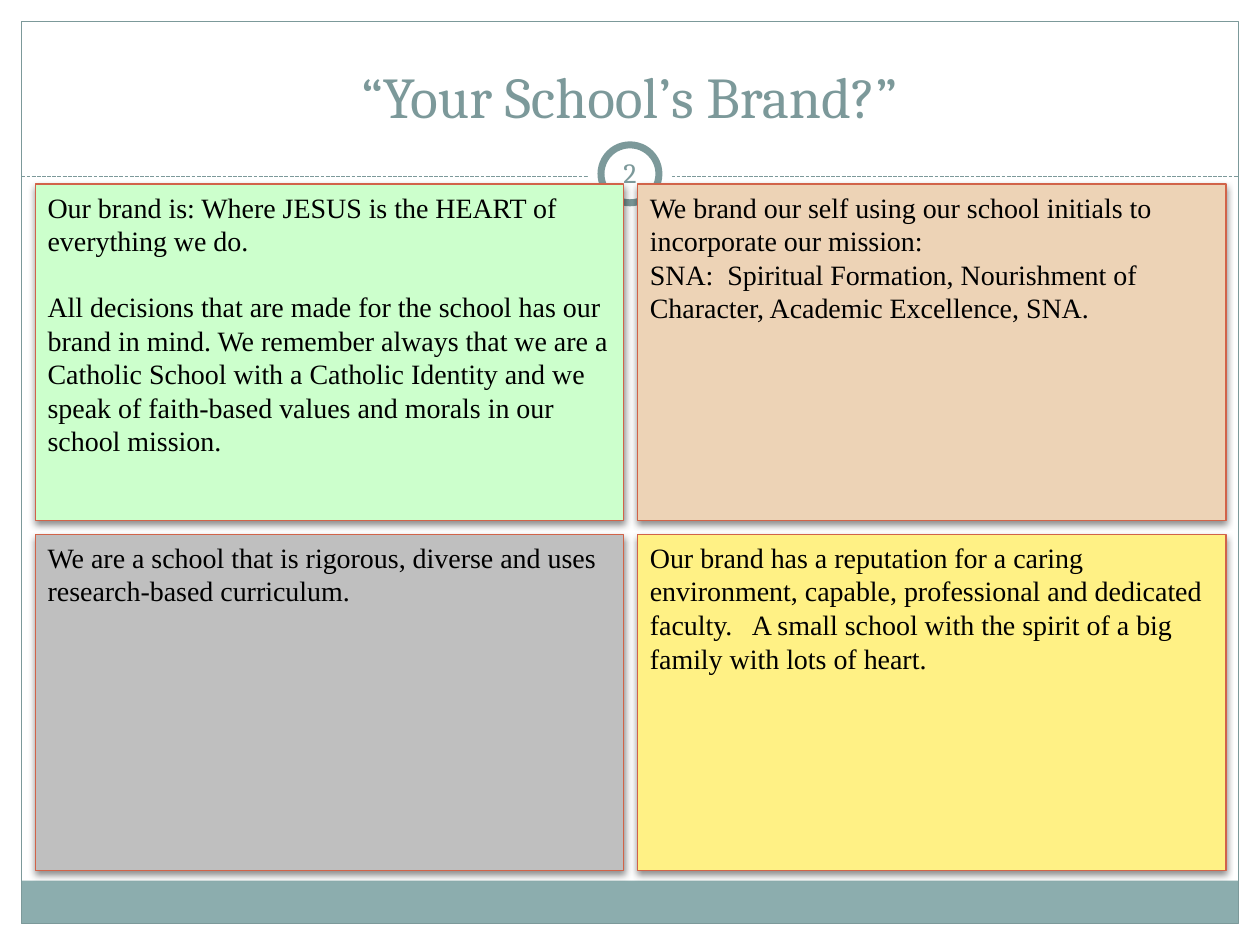
from lxml.etree import SubElement
from pptx import Presentation
from pptx.dml.color import RGBColor
from pptx.enum.dml import MSO_LINE_DASH_STYLE as Dash
from pptx.enum.shapes import MSO_CONNECTOR as Connector, MSO_SHAPE as Shape
from pptx.enum.text import MSO_ANCHOR as Anchor, PP_ALIGN as Align
from pptx.oxml.ns import qn
from pptx.util import Inches, Pt

WHITE = RGBColor(0xFF, 0xFF, 0xFF)
BLACK = RGBColor(0x00, 0x00, 0x00)
TEAL = RGBColor(0x7C, 0x99, 0x9A)
FOOTER_TEAL = RGBColor(0x8C, 0xAD, 0xAE)
RED = RGBColor(0xD1, 0x63, 0x49)
GREEN = RGBColor(0xCC, 0xFF, 0xCC)
TAN = RGBColor(0xED, 0xD3, 0xB6)
GREY = RGBColor(0xBF, 0xBF, 0xBF)
YELLOW = RGBColor(0xFF, 0xF1, 0x85)

WIDTH, HEIGHT = 10, 7.5
MARGIN = 0.17
RULE_Y = 1.4
HEADING_FONT, BODY_FONT = "Cambria", "Times New Roman"

STATEMENTS = [
    (GREEN, [
        "Our brand is: Where JESUS is the HEART of everything we do.",
        "All decisions that are made for the school has our brand in mind. "
        "We remember always that we are a Catholic School with a Catholic "
        "Identity and we speak of faith-based values and morals in our "
        "school mission."], 18.4),
    (TAN, [
        "We brand our self using our school initials to incorporate our mission:",
        "SNA:  Spiritual Formation, Nourishment of Character, "
        "Academic Excellence, SNA."], 0),
    (GREY, [
        "We are a school that is rigorous, diverse and uses "
        "research-based curriculum."], 0),
    (YELLOW, [
        "Our brand has a reputation for a caring environment, capable, "
        "professional and dedicated faculty.   A small school with the "
        "spirit of a big family with lots of heart."], 0),
]


def inches(*lengths):
    return [Inches(length) for length in lengths]


def add_panel(page, box, fill=None, line=None, weight=0.75, kind=Shape.RECTANGLE):
    panel = page.shapes.add_shape(kind, *inches(*box))
    panel.shadow.inherit = False
    if fill is None:
        panel.fill.background()
    else:
        panel.fill.solid()
        panel.fill.fore_color.rgb = fill
    if line is None:
        panel.line.fill.background()
    else:
        panel.line.color.rgb = line
        panel.line.width = Pt(weight)
    return panel


def add_drop_shadow(panel):
    effects = panel._element.spPr.find(qn("a:effectLst"))
    shadow = SubElement(effects, qn("a:outerShdw"), blurRad=str(Pt(4)),
                        dist=str(Pt(2)), dir="5400000", rotWithShape="0")
    color = SubElement(shadow, qn("a:srgbClr"), val=str(BLACK))
    SubElement(color, qn("a:alpha"), val="45000")


def format_para(para, font, size, color, align):
    para.alignment = align
    for span in para.runs:
        span.font.name = font
        span.font.size = Pt(size)
        span.font.color.rgb = color


def add_circle(page, center, diameter, **style):
    x, y = center
    box = (x - diameter / 2, y - diameter / 2, diameter, diameter)
    return add_panel(page, box, kind=Shape.OVAL, **style)


def add_frame(page, box):
    left, top, width, height = box
    right, bottom = left + width, top + height
    # White header and side bands
    for band in ((0, 0, WIDTH, 1.52), (0, 0, left, HEIGHT),
                 (right, 0, WIDTH - right, HEIGHT)):
        add_panel(page, band, fill=WHITE)
    # Footer band and outline
    add_panel(page, (left, bottom - 0.34, width, 0.34), fill=FOOTER_TEAL)
    add_panel(page, box, line=TEAL)
    # Dashed rule with a ring at its middle
    rule = page.shapes.add_connector(
        Connector.STRAIGHT, *inches(left, RULE_Y, right, RULE_Y))
    rule.line.color.rgb = TEAL
    rule.line.width = Pt(0.75)
    rule.line.dash_style = Dash.SQUARE_DOT
    SubElement(rule._element.spPr, qn("a:effectLst"))
    center = (WIDTH / 2, 1.38)
    add_circle(page, center, 0.67, fill=WHITE)
    add_circle(page, center, 0.46, fill=WHITE, line=TEAL, weight=4)


def place_title(page, box):
    title = page.shapes.title
    title.left, title.top, title.width, title.height = inches(*box)
    frame = title.text_frame
    frame.text = "“Your School’s Brand?”"
    frame.vertical_anchor = Anchor.BOTTOM
    format_para(frame.paragraphs[0], HEADING_FONT, 33, TEAL, Align.CENTER)
    # Bring the title in front of the header band
    page.shapes._spTree.append(title._element)


def add_statements(page, box, gap):
    left, top, width, height = box
    card_width, card_height = (width - gap) / 2, (height - gap) / 2
    for index, (fill, texts, space) in enumerate(STATEMENTS):
        row, column = divmod(index, 2)
        card = add_panel(page, (left + column * (card_width + gap),
                                top + row * (card_height + gap),
                                card_width, card_height), fill=fill, line=RED)
        add_drop_shadow(card)
        frame = card.text_frame
        frame.word_wrap = True
        frame.vertical_anchor = Anchor.TOP
        frame.text = "\n".join(texts)
        for para in frame.paragraphs:
            format_para(para, BODY_FONT, 16, BLACK, Align.LEFT)
        frame.paragraphs[-1].space_before = Pt(space)


def add_page_number(page, box):
    frame = page.shapes.add_textbox(*inches(*box)).text_frame
    frame.word_wrap = True
    frame.vertical_anchor = Anchor.MIDDLE
    frame.margin_left = frame.margin_right = Inches(0.05)
    frame.margin_top = frame.margin_bottom = Inches(0.05)
    frame.text = "2"
    format_para(frame.paragraphs[0], HEADING_FONT, 16, TEAL, Align.CENTER)


def main():
    deck = Presentation()
    deck.slide_width, deck.slide_height = inches(WIDTH, HEIGHT)
    page = deck.slides.add_slide(deck.slide_layouts[5])
    add_frame(page, (MARGIN, MARGIN, WIDTH - 2 * MARGIN, HEIGHT - 2 * MARGIN))
    place_title(page, (0.33, 0.25, 9.33, 0.83))
    add_statements(page, (0.28, 1.46, 9.45, 5.45), gap=0.11)
    add_page_number(page, (4.75, 1.13, 0.5, 0.48))
    deck.save("out.pptx")


if __name__ == "__main__":
    main()
